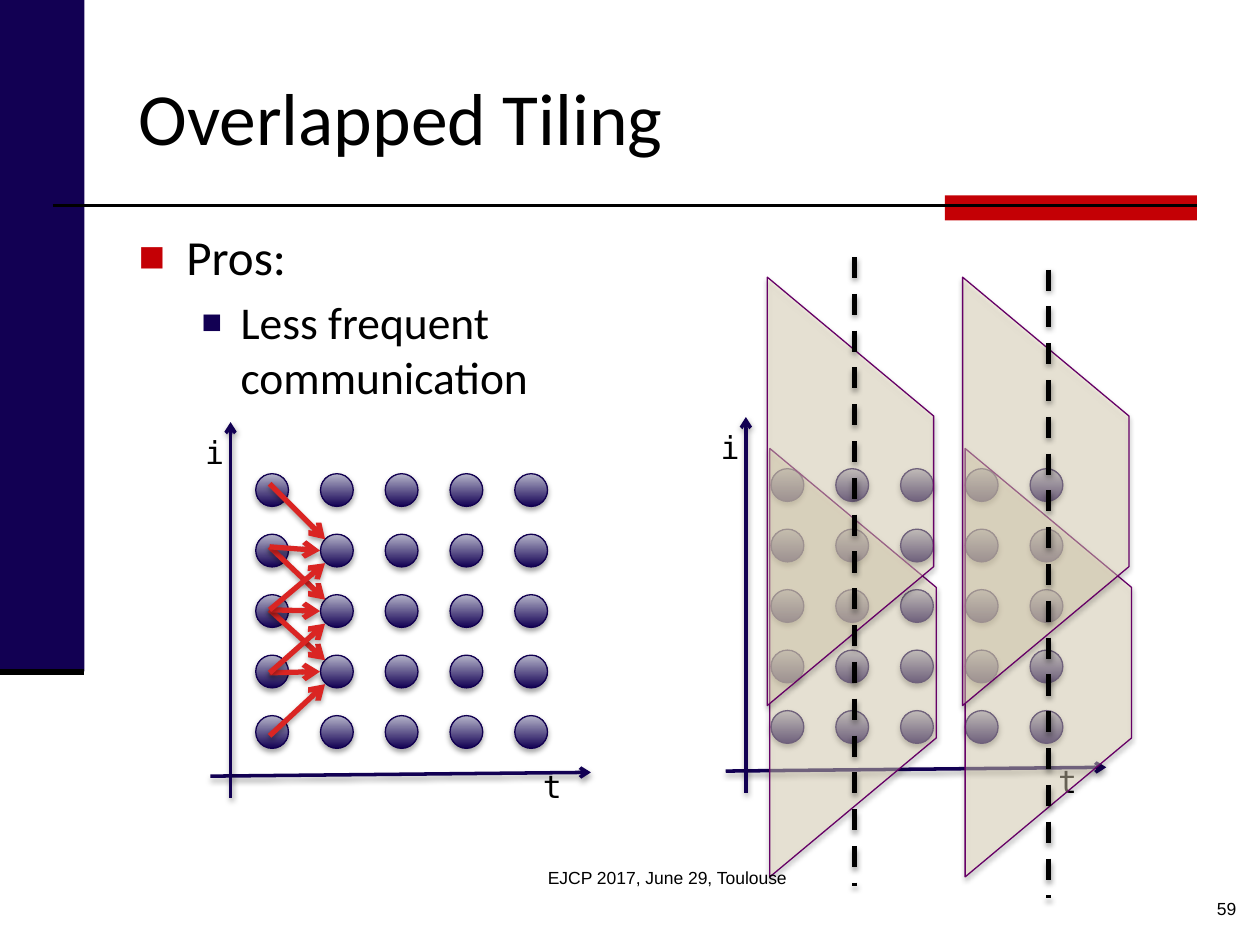
"""Build the Overlapped Tiling slide with its two iteration-space diagrams."""
import dataclasses
import itertools

import lxml.etree
import pptx
import pptx.dml.color
import pptx.enum.dml
import pptx.enum.shapes
import pptx.enum.text
import pptx.oxml.ns
import pptx.util

Inches = pptx.util.Inches
Pt = pptx.util.Pt
qn = pptx.oxml.ns.qn
rgb = pptx.dml.color.RGBColor.from_string
Align = pptx.enum.text.PP_ALIGN
Shape = pptx.enum.shapes.MSO_SHAPE
STRAIGHT = pptx.enum.shapes.MSO_CONNECTOR.STRAIGHT


@dataclasses.dataclass(frozen=True)
class Theme:
    navy: str = "120053"
    dot_edge: str = "120051"
    dot_light: str = "B6B5CA"
    red: str = "C40005"
    arrow_red: str = "DA2523"
    tile: str = "F5E9C8"
    tile_edge: str = "660066"
    black: str = "000000"
    heading_font: str = "Calibri"
    label_font: str = "DejaVu Sans Mono"
    footer_font: str = "Arial"
    title_size: int = 42
    point_size: int = 28
    subpoint_size: int = 26
    label_size: int = 18
    footer_size: int = 10


theme = Theme()


def write(paragraph, text, *, size, font, align=Align.LEFT, bullet=None, margin=0, hang=0, scale=100):
    props = paragraph._p.get_or_add_pPr()
    if bullet:
        props.set("marL", str(Inches(margin)))
        props.set("indent", str(Inches(-hang)))
        tint = lxml.etree.SubElement(props, qn("a:buClr"))
        lxml.etree.SubElement(tint, qn("a:srgbClr"), val=bullet)
        lxml.etree.SubElement(props, qn("a:buSzPct"), val=str(scale * 1000))
        lxml.etree.SubElement(props, qn("a:buFont"), typeface=theme.footer_font)
        lxml.etree.SubElement(props, qn("a:buChar"), char="■")
    paragraph.text = text
    paragraph.alignment = align
    for run in paragraph.runs:
        run.font.size = Pt(size)
        run.font.name = font
        run.font.color.rgb = rgb(theme.black)


def outline(item, color, width, *, shadow=True, arrow=False):
    item.line.color.rgb = rgb(color)
    item.line.width = Pt(width)
    if arrow:
        lxml.etree.SubElement(item.line._get_or_add_ln(), qn("a:tailEnd"), type="arrow")
    effects = lxml.etree.SubElement(item._element.spPr, qn("a:effectLst"))
    if shadow:
        cast = lxml.etree.SubElement(
            effects, qn("a:outerShdw"), blurRad=str(Pt(3.1)), dist=str(Pt(1.8)), dir="5400000", rotWithShape="0")
        shade = lxml.etree.SubElement(cast, qn("a:srgbClr"), val=theme.black)
        lxml.etree.SubElement(shade, qn("a:alpha"), val="35000")


deck = pptx.Presentation()
deck.slide_width, deck.slide_height = Inches(10), Inches(7.5)
slide = deck.slides.add_slide(deck.slide_layouts[1])

for left, top, width, height, color in [(0, 0, 0.67, 5.33, theme.navy), (7.5, 1.55, 2, 0.2, theme.red)]:
    band = slide.shapes.add_shape(Shape.RECTANGLE, Inches(left), Inches(top), Inches(width), Inches(height))
    band.shadow.inherit = False
    band.fill.solid()
    band.fill.fore_color.rgb = rgb(color)
    band.line.fill.background()

for left, right, y, weight in [(0.42, 9.5, 1.63, 1.5), (0, 0.67, 5.33, 3.5)]:
    rule = slide.shapes.add_connector(STRAIGHT, Inches(left), Inches(y), Inches(right), Inches(y))
    outline(rule, theme.black, weight, shadow=False)

title = slide.shapes.title
title.left, title.top, title.width, title.height = Inches(1), Inches(0.3), Inches(8.5), Inches(1.25)
title.text_frame.vertical_anchor = pptx.enum.text.MSO_ANCHOR.MIDDLE
write(title.text_frame.paragraphs[0], "Overlapped Tiling", size=theme.title_size, font=theme.heading_font)

pros = slide.placeholders[1]
pros.left, pros.top, pros.width, pros.height = Inches(1), Inches(1.75), Inches(8.5), Inches(4.95)
pros.text_frame.auto_size = pptx.enum.text.MSO_AUTO_SIZE.NONE
point = pros.text_frame.paragraphs[0]
write(point, "Pros:", size=theme.point_size, font=theme.heading_font,
      bullet=theme.red, margin=0.38, hang=0.38, scale=90)
point.space_before = Pt(0)
subpoint = pros.text_frame.add_paragraph()
subpoint.level = 1
write(subpoint, "Less frequent\vcommunication", size=theme.subpoint_size, font=theme.heading_font,
      bullet=theme.navy, margin=0.81, hang=0.31, scale=75)
subpoint.space_before = Pt(5)

for x, y in [(5.76, 3.31), (1.67, 3.35)]:
    diagram = slide.shapes.add_group_shape().shapes
    for x1, y1, x2, y2 in [(0, 2.81, 3.02, 2.78), (0.16, 2.98, 0.16, 0)]:
        axis = diagram.add_connector(
            STRAIGHT, Inches(x + x1), Inches(y + y1), Inches(x + x2), Inches(y + y2))
        outline(axis, theme.navy, 2, arrow=True)
    for column, row in itertools.product(range(5), range(5)):
        dot = diagram.add_shape(
            Shape.OVAL, Inches(x + 0.36 + 0.514 * column), Inches(y + 0.41 + 0.48 * row), Inches(0.26), Inches(0.26))
        dot.fill.gradient()
        dot.fill.gradient_angle = 90
        for stop, color, position in zip(dot.fill.gradient_stops, (theme.navy, theme.dot_light), (0, 1)):
            stop.color.rgb = rgb(color)
            stop.position = position
        outline(dot, theme.dot_edge, 0.75)
    for name, dx, dy in [("t", 2.54, 2.69), ("i", -0.14, 0.04)]:
        label = diagram.add_textbox(Inches(x + dx), Inches(y + dy), Inches(0.28), Inches(0.4))
        label.text_frame.word_wrap = False
        write(label.text_frame.paragraphs[0], name, size=theme.label_size, font=theme.label_font)

for left, (shift, top) in itertools.product((5.05, 6.6), ((0.02, 4.6), (0, 3.24))):
    tile = slide.shapes.add_shape(
        Shape.TRAPEZOID, Inches(left + shift), Inches(top), Inches(3.4), Inches(1.32))
    tile.rotation = 90
    tile.adjustments[0] = 0.835
    tile.fill.solid()
    tile.fill.fore_color.rgb = rgb(theme.tile)
    tint = tile.fill._xPr.find(qn("a:solidFill")).find(qn("a:srgbClr"))
    lxml.etree.SubElement(tint, qn("a:alpha"), val="42000")
    outline(tile, theme.tile_edge, 0.75)

for x, top in [(6.78, 2.04), (8.32, 2.14)]:
    boundary = slide.shapes.add_connector(STRAIGHT, Inches(x), Inches(top), Inches(x), Inches(top + 4.99))
    outline(boundary, theme.black, 3)
    boundary.line.dash_style = pptx.enum.dml.MSO_LINE.DASH

for target in (3, 2, 1):
    dependences = slide.shapes.add_group_shape().shapes
    for step, tip_x, tip_dy in [(0, 2.54, 0), (1, 2.58, 0.1), (-1, 2.58, -0.09)]:
        dependence = dependences.add_connector(
            STRAIGHT, Inches(2.14), Inches(3.84 + 0.5 * (target + step)),
            Inches(tip_x), Inches(3.89 + 0.48 * target + tip_dy))
        outline(dependence, theme.arrow_red, 3, arrow=True)

for text, left, top, width, height, align in [
        ("59", 7.83, 7.08, 2.08, 0.25, Align.RIGHT),
        ("EJCP 2017, June 29, Toulouse", 3.67, 6.83, 3.25, 0.5, Align.CENTER)]:
    footer = slide.shapes.add_textbox(Inches(left), Inches(top), Inches(width), Inches(height))
    footer.text_frame.word_wrap = True
    write(footer.text_frame.paragraphs[0], text, size=theme.footer_size, font=theme.footer_font, align=align)

deck.save("out.pptx")
